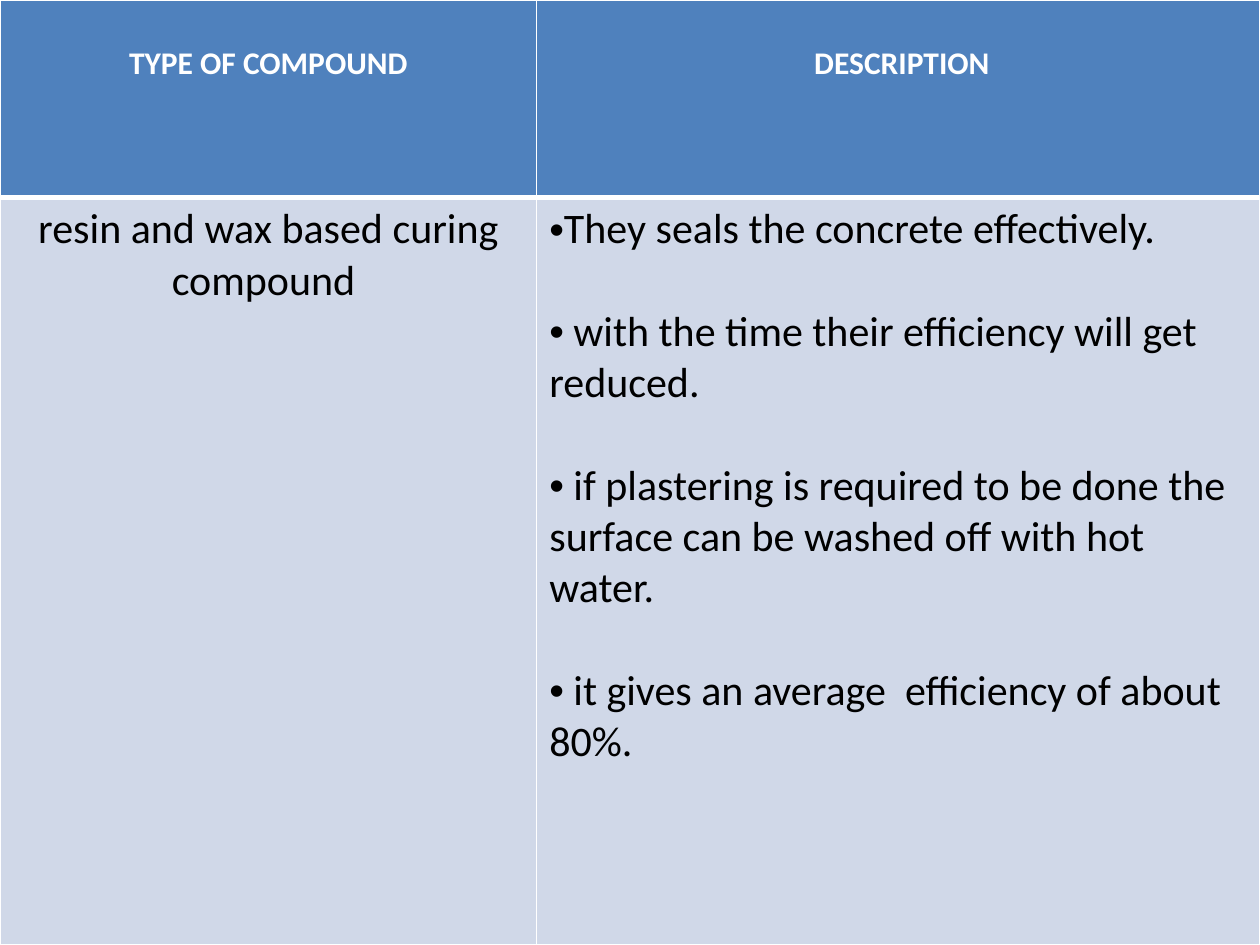
from lxml.etree import SubElement
from pptx import Presentation
from pptx.dml.color import RGBColor
from pptx.enum.text import PP_ALIGN
from pptx.oxml.ns import qn
from pptx.util import Inches, Pt

COLORS = {"header": "4F81BD", "body": "D0D8E8", "border": "FFFFFF",
          "header_text": "FFFFFF", "body_text": "000000"}
COLUMN_WIDTHS = [4.26, 5.74]
ROW_HEIGHTS = [1.57, 5.93]
HEADINGS = ["TYPE OF COMPOUND", " DESCRIPTION"]
COMPOUND = "resin and wax based curing compound "
DESCRIPTIONS = [
    "They seals the concrete effectively.",
    " with the time their efficiency will get reduced.",
    " if plastering is required to be done the surface can be washed off with hot water.",
    " it gives an average  efficiency of about 80%.",
]


def style_cell(cell, fill, top=1, bottom=1):
    """Fill the cell and draw its borders, with top and bottom widths in points."""
    properties = cell._tc.get_or_add_tcPr()
    for side, width in {"L": 1, "R": 1, "T": top, "B": bottom}.items():
        line = SubElement(properties, qn(f"a:ln{side}"), w=str(Pt(width)))
        solid = SubElement(line, qn("a:solidFill"))
        SubElement(solid, qn("a:srgbClr"), val=COLORS["border"])
    cell.fill.solid()
    cell.fill.fore_color.rgb = RGBColor.from_string(COLORS[fill])


def add_bullet(paragraph):
    properties = paragraph._p.get_or_add_pPr()
    properties.set("marL", "0")
    properties.set("indent", "0")
    SubElement(properties, qn("a:buFont"), typeface="Arial")
    SubElement(properties, qn("a:buChar"), char="•")


def add_text(paragraph, text, size, color, bold=False):
    run = paragraph.add_run()
    run.text = text
    run.font.name = "Calibri"
    run.font.size = Pt(size)
    run.font.bold = bold
    run.font.color.rgb = RGBColor.from_string(COLORS[color])


def fill_header(cell, text):
    style_cell(cell, "header", bottom=3)
    cell.margin_top = Inches(0.35)
    paragraph = cell.text_frame.paragraphs[0]
    paragraph.alignment = PP_ALIGN.CENTER
    add_text(paragraph, text, 18, "header_text", bold=True)


def fill_compound(cell, text):
    style_cell(cell, "body", top=3)
    paragraph = cell.text_frame.paragraphs[0]
    paragraph.alignment = PP_ALIGN.CENTER
    add_text(paragraph, text, 24, "body_text")


def fill_descriptions(cell, texts):
    style_cell(cell, "body", top=3)
    frame = cell.text_frame
    for index, text in enumerate(texts):
        paragraph = frame.add_paragraph() if index else frame.paragraphs[0]
        if index:
            paragraph.space_before = Pt(29.3)
        add_bullet(paragraph)
        add_text(paragraph, text, 24, "body_text")


def add_compound_table(slide):
    table = slide.shapes.add_table(
        len(ROW_HEIGHTS), len(COLUMN_WIDTHS), Inches(0), Inches(0), Inches(10), Inches(7.5)
    ).table
    for column, width in zip(table.columns, COLUMN_WIDTHS):
        column.width = Inches(width)
    for row, height in zip(table.rows, ROW_HEIGHTS):
        row.height = Inches(height)
    return table


def main():
    presentation = Presentation()
    presentation.slide_width = Inches(10)
    presentation.slide_height = Inches(7.5)
    slide = presentation.slides.add_slide(presentation.slide_layouts[6])
    table = add_compound_table(slide)
    for column, heading in enumerate(HEADINGS):
        fill_header(table.cell(0, column), heading)
    fill_compound(table.cell(1, 0), COMPOUND)
    fill_descriptions(table.cell(1, 1), DESCRIPTIONS)
    presentation.save("out.pptx")


if __name__ == "__main__":
    main()
